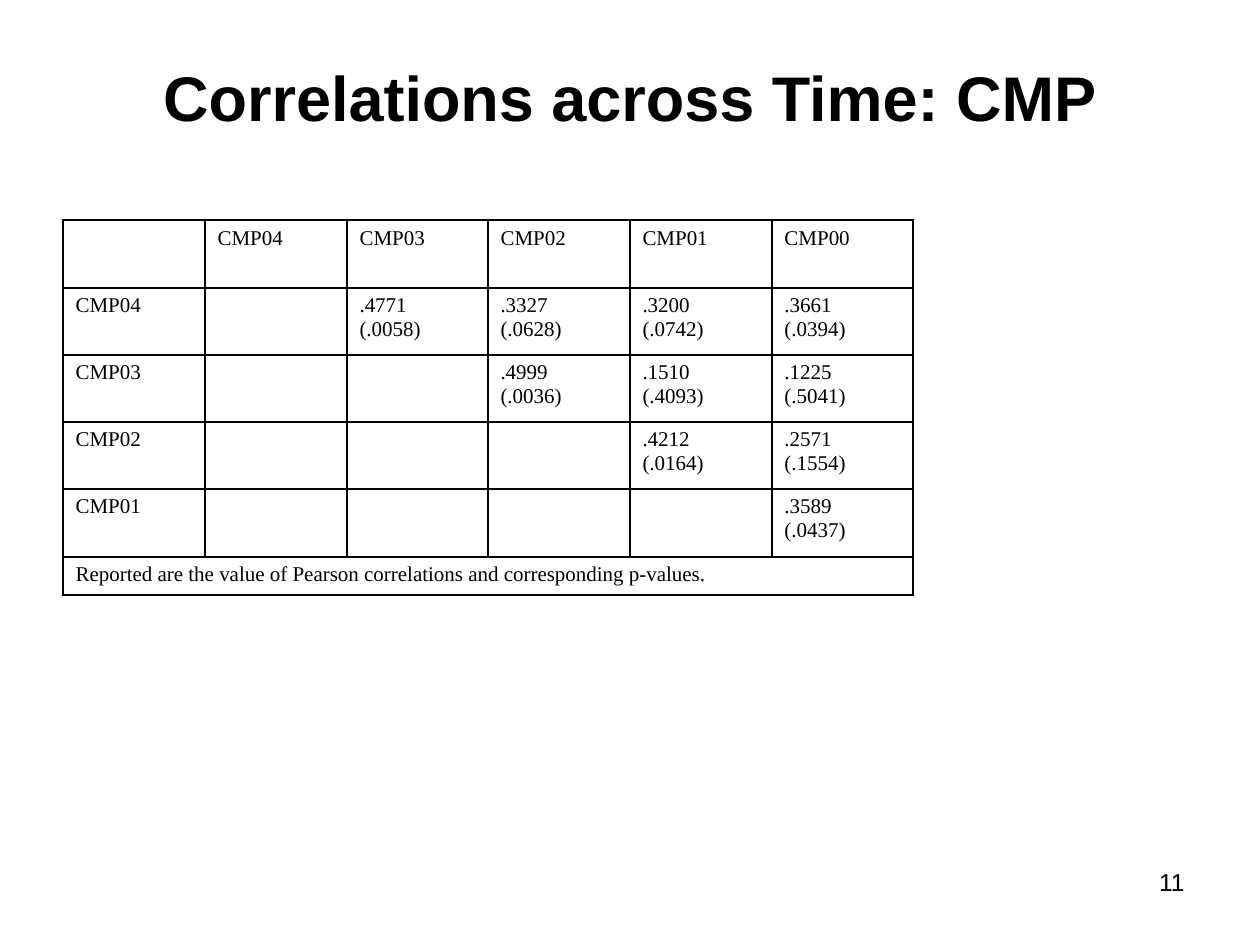
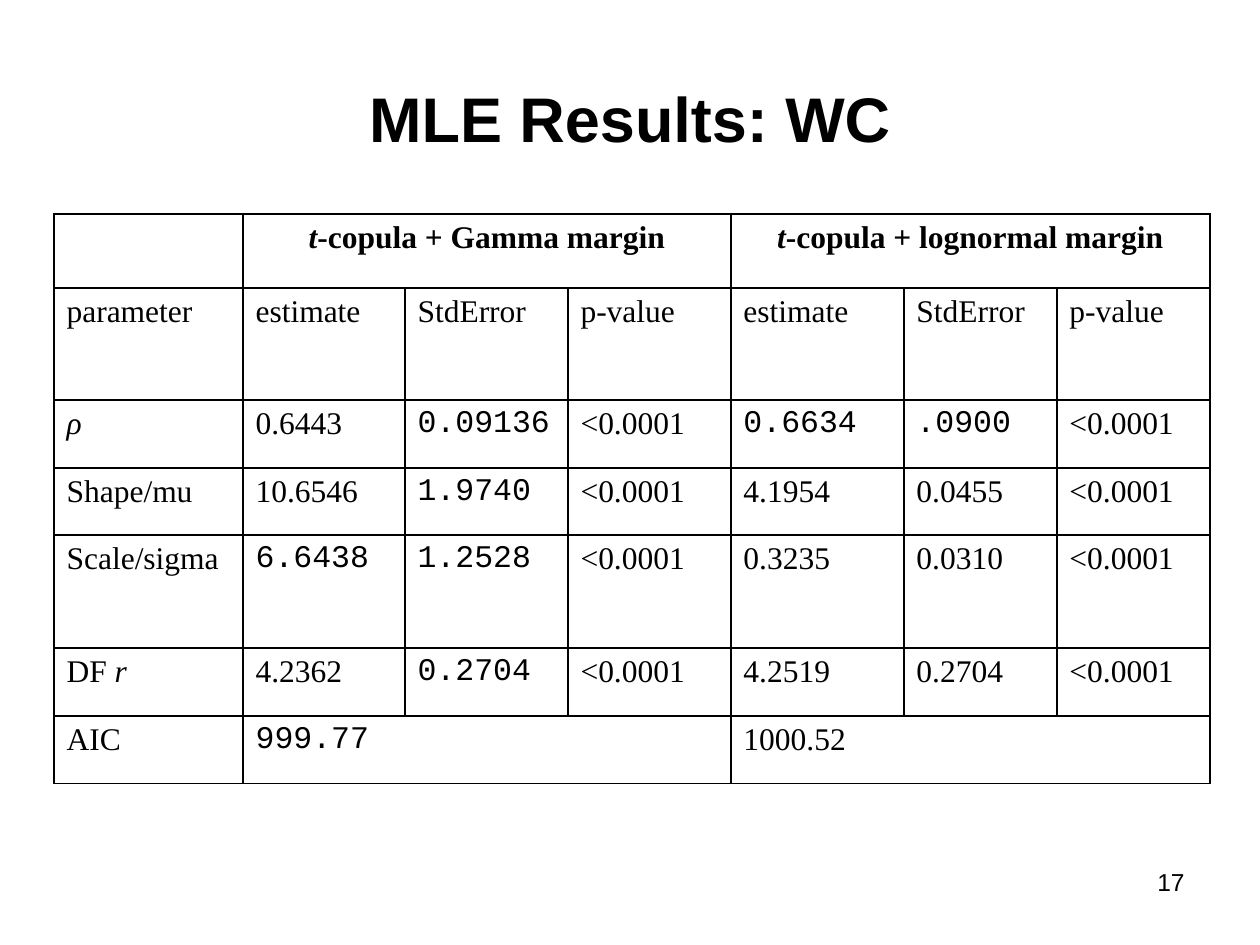
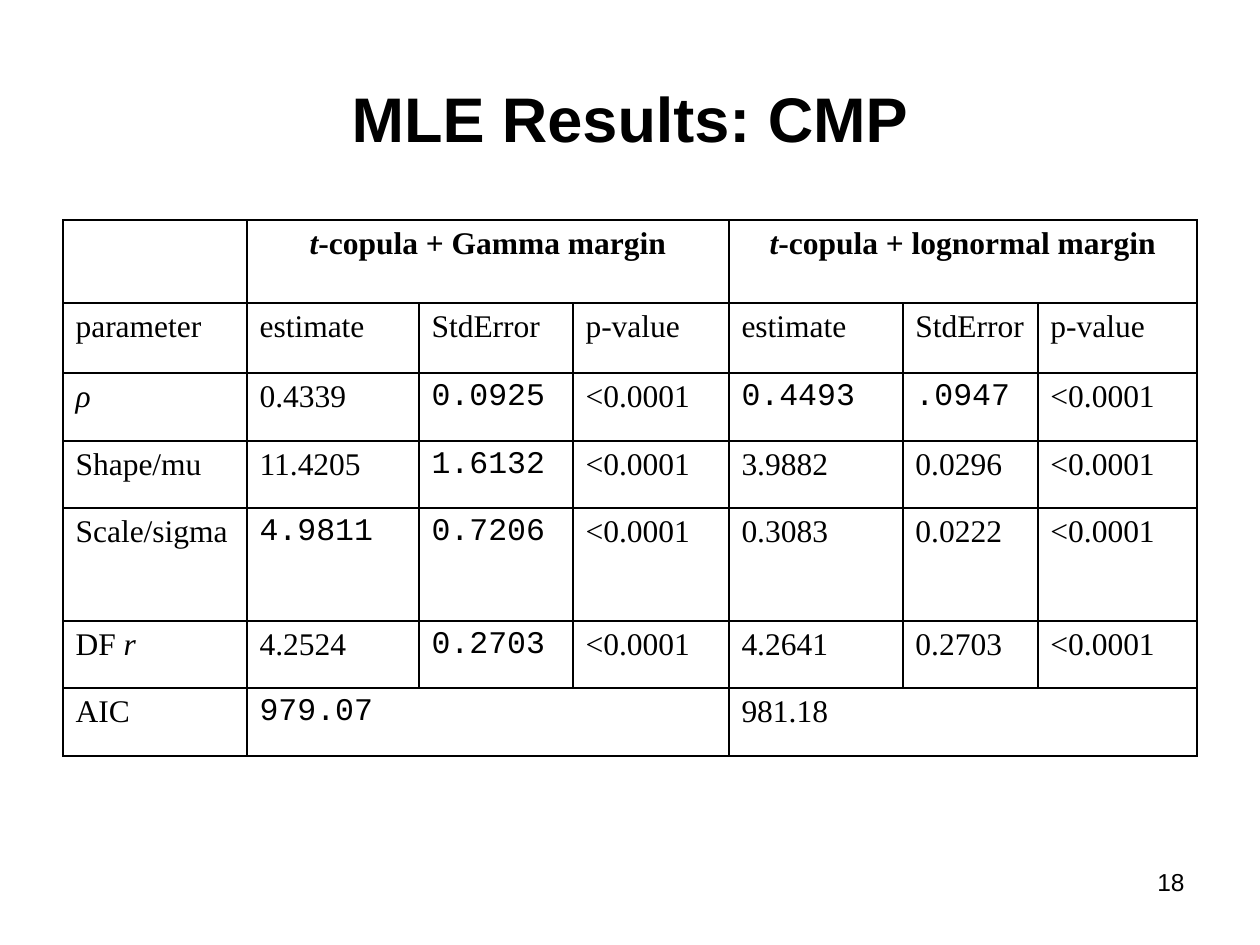
from itertools import takewhile

from lxml.etree import SubElement
from pptx import Presentation
from pptx.dml.color import RGBColor
from pptx.enum.text import MSO_ANCHOR, PP_ALIGN
from pptx.oxml.ns import qn
from pptx.util import Emu, Pt

EMU_PER_PX = 914400 / 126
COLORS = {"ink": "000000", "paper": "FFFFFF"}
SANS, SERIF, MONO = "Arial", "Times New Roman", "Courier New"
HANGING = 48
TITLE_ONLY = 5
PARAMETERS = ["_ρ_", "Shape/mu", "Scale/sigma", "DF _r_"]
P_VALUE = "<0.0001"
MONO_CELLS = {(2, 2), (2, 4), (2, 5), (3, 2), (4, 1), (4, 2), (5, 2), (6, 1)}

CORRELATIONS = [
    ["", "CMP04", "CMP03", "CMP02", "CMP01", "CMP00"],
    ["CMP04", "", ".4771\n(.0058)", ".3327\n(.0628)", ".3200\n(.0742)", ".3661\n(.0394)"],
    ["CMP03", "", "", ".4999\n(.0036)", ".1510\n(.4093)", ".1225\n(.5041)"],
    ["CMP02", "", "", "", ".4212\n(.0164)", ".2571\n(.1554)"],
    ["CMP01", "", "", "", "", ".3589\n(.0437)"],
    ["Reported are the value of Pearson correlations and corresponding p-values."] + [None] * 5,
]
WC_ESTIMATES = [
    ("0.6443", "0.09136", "0.6634", ".0900"),
    ("10.6546", "1.9740", "4.1954", "0.0455"),
    ("6.6438", "1.2528", "0.3235", "0.0310"),
    ("4.2362", "0.2704", "4.2519", "0.2704"),
]
CMP_ESTIMATES = [
    ("0.4339", "0.0925", "0.4493", ".0947"),
    ("11.4205", "1.6132", "3.9882", "0.0296"),
    ("4.9811", "0.7206", "0.3083", "0.0222"),
    ("4.2524", "0.2703", "4.2641", "0.2703"),
]


def px(length):
    return Emu(round(length * EMU_PER_PX))


def style_run(run, font, size, bold=False, italic=False):
    run.font.name = font
    run.font.size = Pt(size)
    run.font.bold = bold
    run.font.italic = italic
    run.font.color.rgb = RGBColor.from_string(COLORS["ink"])


def add_slide(deck, heading, number, heading_height):
    slide = deck.slides.add_slide(deck.slide_layouts[TITLE_ONLY])
    slide.background.fill.solid()
    slide.background.fill.fore_color.rgb = RGBColor.from_string(COLORS["paper"])

    title = slide.shapes.title
    title.left, title.top = px(63), px(38)
    title.width, title.height = px(1134), px(heading_height)
    title.text_frame.text = heading
    title.text_frame.vertical_anchor = MSO_ANCHOR.MIDDLE
    title_line = title.text_frame.paragraphs[0]
    title_line.alignment = PP_ALIGN.CENTER
    style_run(title_line.runs[0], SANS, 36, bold=True)

    page_number = slide.shapes.add_textbox(px(903), px(861), px(294), px(66))
    page_number.text_frame.word_wrap = True
    page_number.text_frame.text = str(number)
    number_line = page_number.text_frame.paragraphs[0]
    number_line.alignment = PP_ALIGN.RIGHT
    style_run(number_line.runs[0], SANS, 14)
    return slide


def add_borders(cell):
    properties = cell._tc.get_or_add_tcPr()
    for side in ("lnL", "lnR", "lnT", "lnB"):
        border = SubElement(properties, qn(f"a:{side}"), w=str(Pt(1)))
        fill = SubElement(border, qn("a:solidFill"))
        SubElement(fill, qn("a:srgbClr"), val=COLORS["ink"])


def write_cell(cell, text, font, size, header):
    cell.text_frame.text = text
    for paragraph in cell.text_frame.paragraphs:
        pieces = paragraph.text.split("_")
        paragraph.text = ""
        indents = paragraph._p.get_or_add_pPr()
        indents.set("marL", str(px(HANGING)))
        indents.set("indent", str(-px(HANGING)))
        if header:
            paragraph.alignment = PP_ALIGN.CENTER
        for position, piece in enumerate(pieces):
            if piece:
                run = paragraph.add_run()
                run.text = piece
                style_run(run, font, size, bold=header, italic=position % 2 == 1)
        if not paragraph.runs:
            SubElement(paragraph._p, qn("a:endParaRPr"), sz=str(size * 100))


def add_grid(slide, left, top, columns, heights, rows, size, mono=(), headers=()):
    grid = slide.shapes.add_table(
        len(rows), len(columns), px(left), px(top), px(sum(columns)), px(sum(heights))
    ).table
    grid.first_row = grid.horz_banding = False
    for column, width in zip(grid.columns, columns):
        column.width = px(width)
    for r, (row, height) in enumerate(zip(rows, heights)):
        grid.rows[r].height = px(height)
        for c, text in enumerate(row):
            cell = grid.cell(r, c)
            add_borders(cell)
            cell.fill.background()
            font = MONO if (r, c) in mono else SERIF
            write_cell(cell, text or "", font, size, (r, c) in headers)
        for c, text in enumerate(row):
            covered = len(list(takewhile(lambda value: value is None, row[c + 1:])))
            if text is not None and covered:
                grid.cell(r, c).merge(grid.cell(r, c + covered))


def mle_rows(estimates, gamma_aic, lognormal_aic):
    margins = ["", "_t_-copula + Gamma margin", None, None,
               "_t_-copula + lognormal margin", None, None]
    measures = ["parameter"] + ["estimate", "StdError", "p-value"] * 2
    fits = [
        [parameter, gamma, gamma_error, P_VALUE, lognormal, lognormal_error, P_VALUE]
        for parameter, (gamma, gamma_error, lognormal, lognormal_error)
        in zip(PARAMETERS, estimates)
    ]
    aic = ["AIC", gamma_aic, None, None, lognormal_aic, None, None]
    return [margins, measures, *fits, aic]


def add_mle_grid(slide, left, top, columns, heights, rows):
    add_grid(slide, left, top, columns, heights, rows, 18,
             mono=MONO_CELLS, headers={(0, 1), (0, 4)})


def main():
    deck = Presentation()
    deck.slide_width, deck.slide_height = px(1260), px(945)

    correlations = add_slide(deck, "Correlations across Time: CMP", 11, 117)
    add_grid(correlations, 63, 220, [142, 142, 141] * 2,
             [68, 67, 67, 67, 68, 38], CORRELATIONS, 12)

    wc_results = add_slide(deck, "MLE Results: WC", 17, 158)
    add_mle_grid(wc_results, 54, 214, [189, 162, 163, 163, 173, 153, 153],
                 [74, 112, 68, 67, 113, 68, 68],
                 mle_rows(WC_ESTIMATES, "999.77", "1000.52"))

    cmp_results = add_slide(deck, "MLE Results: CMP", 18, 158)
    add_mle_grid(cmp_results, 63, 220, [184, 172, 154, 156, 174, 135, 159],
                 [83, 70, 68, 67, 113, 67, 68],
                 mle_rows(CMP_ESTIMATES, "979.07", "981.18"))

    deck.save("out.pptx")


if __name__ == "__main__":
    main()
